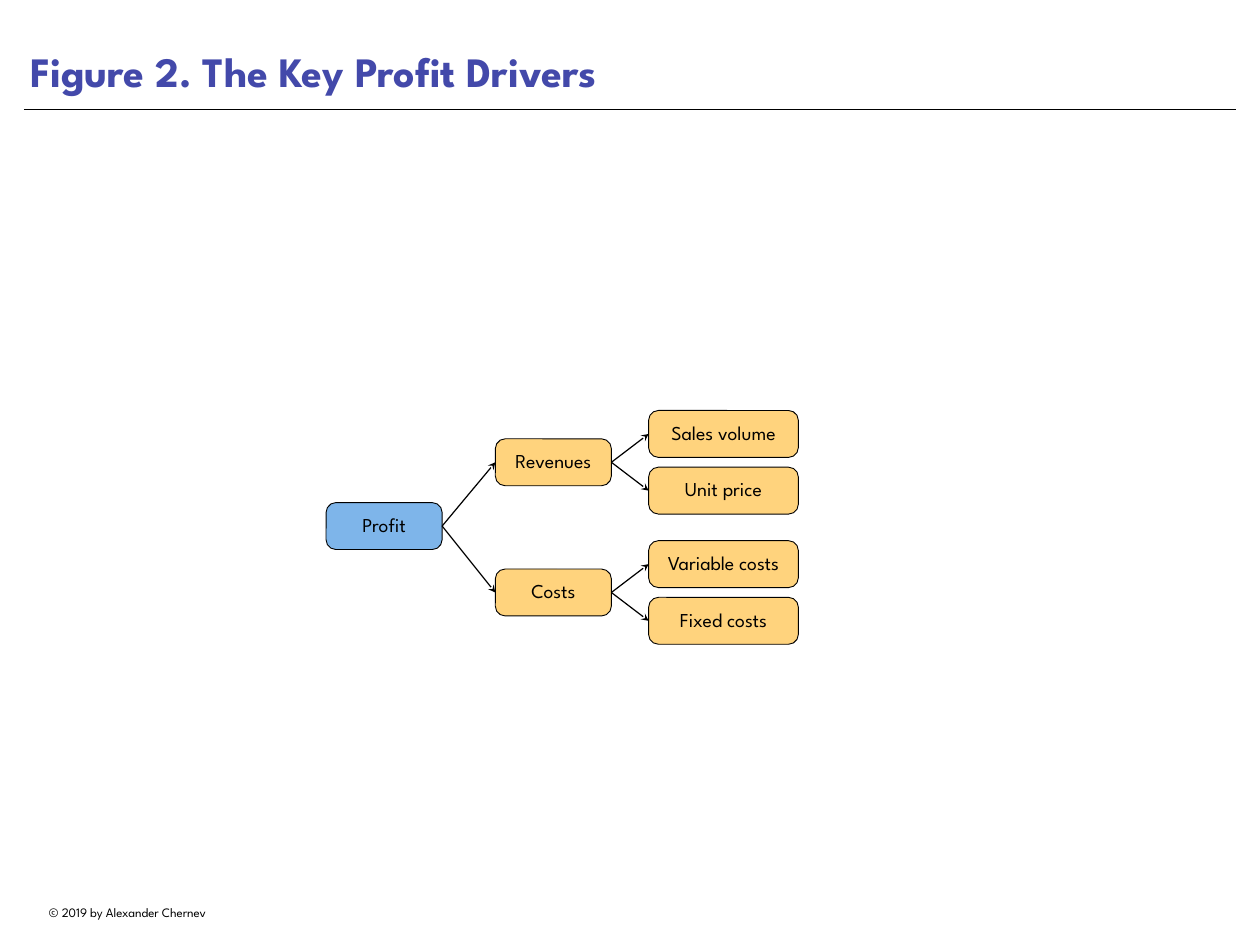
from lxml import etree
from pptx import Presentation
from pptx import util as u
from pptx.dml.color import RGBColor
from pptx.enum import shapes, text
from pptx.oxml.ns import qn

WIDTH, HEIGHT = 14.22, 10.67
MARGIN = 0.27
FONT = "League Spartan"
INK, INDIGO, BLUE, AMBER = "000000", "4349AA", "7EB5EA", "FFD37D"

TITLE = "Figure 2. The Key Profit Drivers"
CREDIT = "© 2019 by Alexander Chernev"
ROOT = "Profit"
BRANCHES = [
    ("Revenues", ["Sales volume", "Unit price"]),
    ("Costs", ["Variable costs", "Fixed costs"]),
]

# Tree grid: (left, width) of each column, then vertical centres and steps
COLUMNS = [(3.68, 1.31), (5.59, 1.31), (7.32, 1.69)]
BOX_HEIGHT = 0.53
ROOT_CENTRE = 5.94
FIRST_BRANCH, BRANCH_STEP = 5.22, 1.47
LEAF_STEP = 0.64

prs = Presentation()
prs.slide_width, prs.slide_height = u.Inches(WIDTH), u.Inches(HEIGHT)
slide = prs.slides.add_slide(prs.slide_layouts[5])


def rgb(color):
    return RGBColor.from_string(color)


def inches(*lengths):
    return [u.Inches(length) for length in lengths]


def write(frame, words, size, color, align, anchor, inset, bold=False):
    frame.vertical_anchor = anchor
    frame.margin_left = frame.margin_right = u.Inches(inset)
    frame.margin_top = frame.margin_bottom = u.Inches(inset)
    paragraph = frame.paragraphs[0]
    paragraph.alignment = align
    run = paragraph.add_run()
    run.text = words
    run.font.name, run.font.size, run.font.bold = FONT, u.Pt(size), bold
    run.font.color.rgb = rgb(color)
    return paragraph


def add_line(start, end, weight):
    line = slide.shapes.add_connector(
        shapes.MSO_CONNECTOR.STRAIGHT, *inches(*start, *end))
    line.line.color.rgb = rgb(INK)
    line.line.width = u.Pt(weight)
    etree.SubElement(line._element.spPr, qn("a:effectLst"))
    return line


def add_box(words, column, centre, fill):
    left, width = COLUMNS[column]
    box = slide.shapes.add_shape(
        shapes.MSO_SHAPE.ROUNDED_RECTANGLE,
        *inches(left, centre - BOX_HEIGHT / 2, width, BOX_HEIGHT))
    box.adjustments[0] = 0.21
    box.shadow.inherit = False
    box.fill.solid()
    box.fill.fore_color.rgb = rgb(fill)
    box.line.color.rgb = rgb(INK)
    box.line.width = u.Pt(0.75)
    label = write(box.text_frame, words, 16, INK, text.PP_ALIGN.CENTER,
                  text.MSO_ANCHOR.MIDDLE, 0.04)
    label.line_spacing = 0.9
    return box


def add_arrow(parent, child):
    """Join the parent's right side to the child's left side."""
    arrow = add_line((0, 0), (1, 1), 1)
    arrow.begin_connect(parent, 3)
    arrow.end_connect(child, 1)
    etree.SubElement(arrow.line._get_or_add_ln(), qn("a:tailEnd"), type="stealth")


title = slide.shapes.title
title.left, title.top, title.width, title.height = inches(
    MARGIN, 0, WIDTH - 2 * MARGIN, 1.15)
title.text_frame.auto_size = text.MSO_AUTO_SIZE.NONE
write(title.text_frame, TITLE, 34, INDIGO, text.PP_ALIGN.LEFT,
      text.MSO_ANCHOR.BOTTOM, 0.07, bold=True)
add_line((MARGIN, 1.24), (WIDTH - MARGIN, 1.24), 0.5)

profit = add_box(ROOT, 0, ROOT_CENTRE, BLUE)
for row, (branch_name, leaves) in enumerate(BRANCHES):
    branch_centre = FIRST_BRANCH + row * BRANCH_STEP
    branch = add_box(branch_name, 1, branch_centre, AMBER)
    add_arrow(profit, branch)
    for place, leaf_name in enumerate(leaves):
        offset = (place - (len(leaves) - 1) / 2) * LEAF_STEP
        leaf = add_box(leaf_name, 2, branch_centre + offset, AMBER)
        add_arrow(branch, leaf)

credit = slide.shapes.add_textbox(*inches(MARGIN, 10.16, 2.34, 0.28))
credit.text_frame.word_wrap = False
write(credit.text_frame, CREDIT, 10.5, INK, text.PP_ALIGN.CENTER,
      text.MSO_ANCHOR.TOP, 0.05)
credit.text_frame.margin_left = credit.text_frame.margin_right = u.Inches(0.1)

prs.save("out.pptx")
